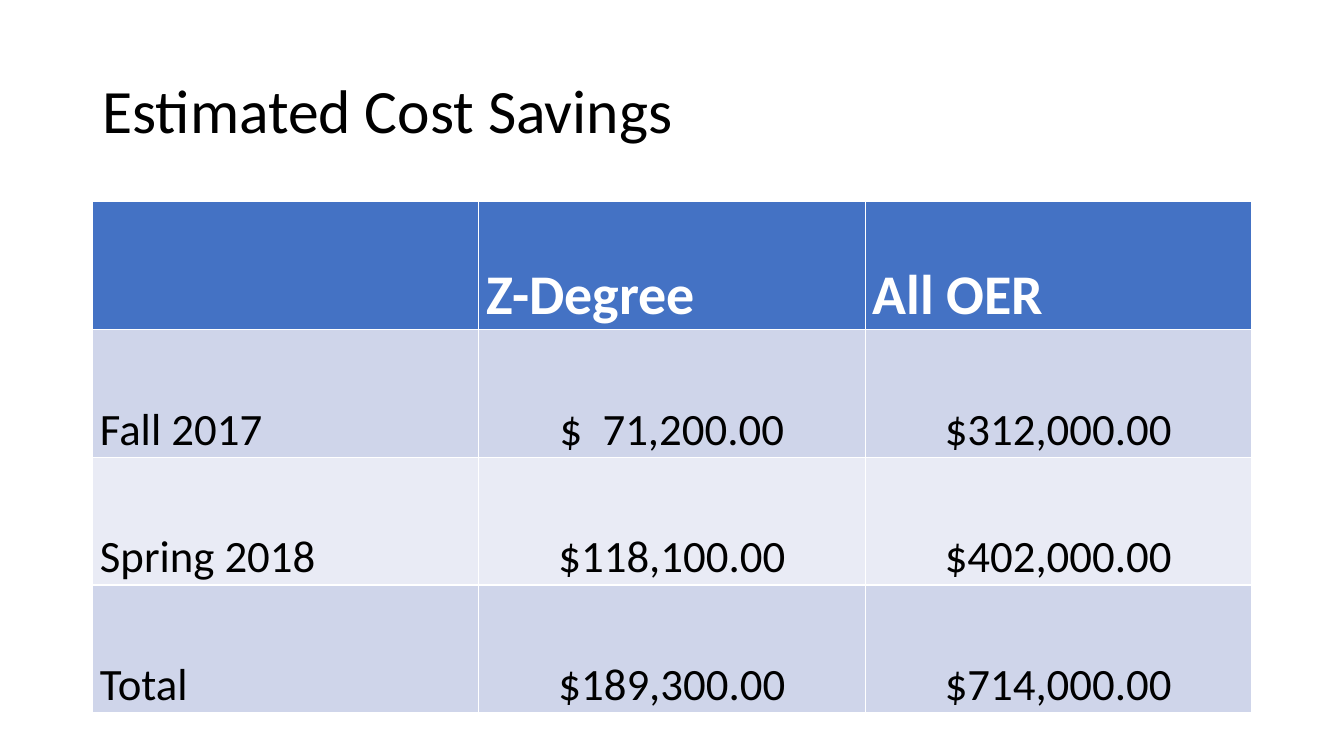
from pptx import Presentation
from pptx.dml.color import RGBColor
from pptx.enum.text import MSO_ANCHOR, PP_ALIGN
from pptx.util import Pt

LEFT, CENTER = PP_ALIGN.LEFT, PP_ALIGN.CENTER
MIDDLE, BOTTOM = MSO_ANCHOR.MIDDLE, MSO_ANCHOR.BOTTOM

COLORS = {
    "header": "4472C4",
    "odd_row": "CFD5EA",
    "even_row": "E9EBF5",
    "text": "000000",
    "header_text": "FFFFFF",
}

SAVINGS = [
    ["", "Z-Degree", "All OER"],
    ["Fall 2017", "$  71,200.00", "$312,000.00"],
    ["Spring 2018", "$118,100.00", "$402,000.00"],
    ["Total", "$189,300.00", "$714,000.00"],
]
LEFT_EDGE, CONTENT_WIDTH = 66, 828
ROW_HEIGHT = 91.3


def write(frame, text, size, color="text", bold=False, align=LEFT, spacing=None):
    paragraph = frame.paragraphs[0]
    paragraph.alignment = align
    paragraph.line_spacing = spacing
    run = paragraph.add_run()
    run.text = text
    run.font.name = "Calibri"
    run.font.size = Pt(size)
    run.font.bold = bold
    run.font.color.rgb = RGBColor.from_string(COLORS[color])


prs = Presentation()
prs.slide_width, prs.slide_height = Pt(960), Pt(540)
slide = prs.slides.add_slide(prs.slide_layouts[6])

title = slide.shapes.add_textbox(
    Pt(LEFT_EDGE), Pt(28.75), Pt(CONTENT_WIDTH), Pt(104.4)
).text_frame
title.word_wrap = True
title.vertical_anchor = MIDDLE
write(title, "Estimated Cost Savings", 44, spacing=0.9)

savings_table = slide.shapes.add_table(
    len(SAVINGS), len(SAVINGS[0]),
    Pt(LEFT_EDGE), Pt(144), Pt(CONTENT_WIDTH), Pt(ROW_HEIGHT * len(SAVINGS)),
).table

for row, entries in enumerate(SAVINGS):
    savings_table.rows[row].height = Pt(ROW_HEIGHT)
    is_header = row == 0
    band = "header" if is_header else "odd_row" if row % 2 else "even_row"
    for column, entry in enumerate(entries):
        cell = savings_table.cell(row, column)
        cell.fill.solid()
        cell.fill.fore_color.rgb = RGBColor.from_string(COLORS[band])
        cell.vertical_anchor = BOTTOM
        cell.margin_left = cell.margin_right = Pt(5.4)
        cell.margin_top = cell.margin_bottom = Pt(0)
        if entry:
            write(
                cell.text_frame, entry,
                size=40 if is_header else 32,
                color="header_text" if is_header else "text",
                bold=is_header,
                align=CENTER if column and not is_header else LEFT,
                spacing=Pt(15),
            )

prs.save("out.pptx")
